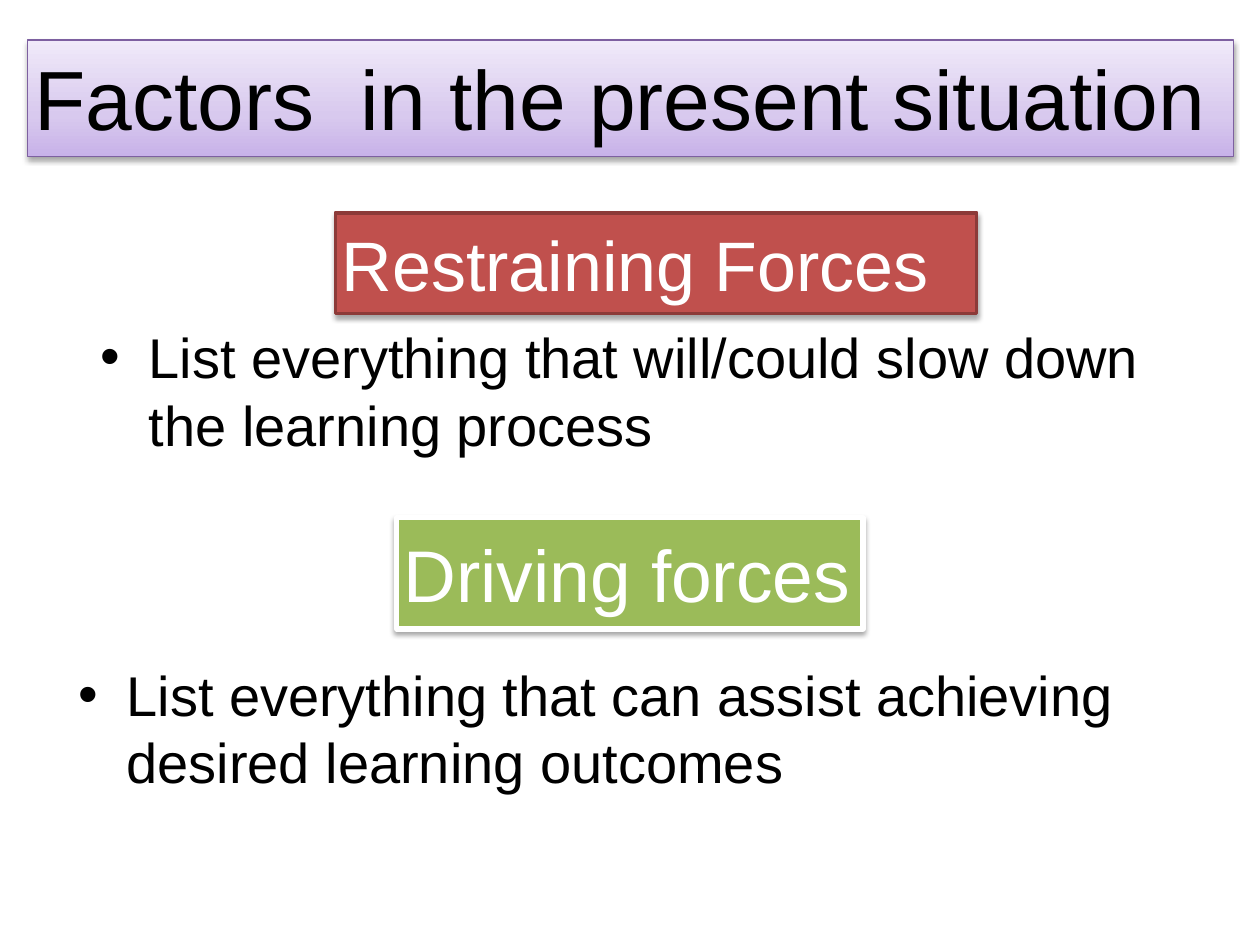
from copy import deepcopy

from lxml import etree
from pptx import Presentation
from pptx import util as u
from pptx.dml.color import RGBColor
from pptx.enum import shapes, text
from pptx.oxml import ns

BLACK = RGBColor(0x00, 0x00, 0x00)
WHITE = RGBColor(0xFF, 0xFF, 0xFF)
RED = RGBColor(0xC0, 0x50, 0x4D)
DARK_RED = RGBColor(0x8C, 0x3A, 0x38)
GREEN = RGBColor(0x9B, 0xBB, 0x59)
PURPLE = RGBColor(0x7D, 0x60, 0xA0)
LILACS = {
    0: RGBColor(0xC8, 0xB2, 0xE9),
    0.35: RGBColor(0xD8, 0xC9, 0xEE),
    1: RGBColor(0xF0, 0xEA, 0xF9),
}


class SlideBuilder:
    """Holds the text style and the slide being built."""

    font_name = "Arial"
    inset = u.Cm(0.13)
    indent = u.Cm(0.97)

    def __init__(self, slide):
        self.slide = slide

    def set_text(self, box, words, size, color, anchor, bullet=False):
        frame = box.text_frame
        settings = {
            "word_wrap": True,
            "auto_size": text.MSO_AUTO_SIZE.NONE,
            "vertical_anchor": anchor,
        }
        for side in ("left", "top", "right", "bottom"):
            settings[f"margin_{side}"] = self.inset
        for name, value in settings.items():
            setattr(frame, name, value)
        para = frame.paragraphs[0]
        para.alignment = text.PP_ALIGN.LEFT
        para.space_before = u.Pt(0)
        if bullet:
            props = para._p.get_or_add_pPr()
            props.set("marL", str(self.indent))
            props.set("indent", str(-self.indent))
            etree.SubElement(props, ns.qn("a:buFont"), typeface=self.font_name)
            etree.SubElement(props, ns.qn("a:buChar"), char="•")
        span = para.add_run()
        span.text = words
        style = {"name": self.font_name, "size": u.Pt(size), "bold": False}
        for name, value in style.items():
            setattr(span.font, name, value)
        span.font.color.rgb = color

    def add_shadow(self, box):
        box.shadow.inherit = False
        effects = box._element.spPr.find(ns.qn("a:effectLst"))
        shadow = etree.SubElement(
            effects, ns.qn("a:outerShdw"), blurRad=str(u.Pt(3)),
            dist=str(u.Pt(1.8)), dir="5400000", rotWithShape="0")
        color = etree.SubElement(shadow, ns.qn("a:srgbClr"), val=str(BLACK))
        etree.SubElement(color, ns.qn("a:alpha"), val="35000")

    def fill_gradient(self, box, stops):
        box.fill.gradient()
        box.fill.gradient_angle = 90
        stop_list = box._element.spPr.find(".//" + ns.qn("a:gsLst"))
        stop_list.insert(1, deepcopy(stop_list[0]))
        for stop, (position, color) in zip(box.fill.gradient_stops, stops.items()):
            stop.position = position
            stop.color.rgb = color

    def add_panel(self, place, words, size, fill, line, line_width,
                  color=WHITE, anchor=text.MSO_ANCHOR.MIDDLE, box=None):
        left, top, width, height = map(u.Cm, place)
        if box is None:
            box = self.slide.shapes.add_shape(
                shapes.MSO_SHAPE.RECTANGLE, left, top, width, height)
        else:
            box.left, box.top, box.width, box.height = left, top, width, height
        if isinstance(fill, dict):
            self.fill_gradient(box, fill)
        else:
            box.fill.solid()
            box.fill.fore_color.rgb = fill
        box.line.color.rgb = line
        box.line.width = u.Pt(line_width)
        self.add_shadow(box)
        self.set_text(box, words, size, color, anchor)

    def add_bullet(self, left, top, words):
        box = self.slide.shapes.add_textbox(
            u.Cm(left), u.Cm(top), u.Cm(21.59), u.Cm(3.56))
        self.set_text(box, words, 32, BLACK, text.MSO_ANCHOR.TOP, bullet=True)


def main():
    deck = Presentation()
    deck.slide_width, deck.slide_height = u.Cm(25.4), u.Cm(19.05)
    page = deck.slides.add_slide(deck.slide_layouts[5])
    builder = SlideBuilder(page)

    # Restraining forces
    builder.add_panel((6.76, 4.29, 12.93, 2.03), "Restraining Forces", 40,
                      RED, DARK_RED, 2, box=page.shapes.title)
    builder.add_bullet(
        1.9, 6.38, "List everything that will/could slow down the learning process")

    # Driving forces
    builder.add_panel((8, 10.44, 9.4, 2.24), "Driving forces", 41.8,
                      GREEN, WHITE, 3)
    builder.add_bullet(
        1.45, 13.18,
        "List everything that can assist achieving desired learning outcomes")

    # Heading banner
    builder.add_panel((0.56, 0.81, 24.31, 2.34),
                      "Factors  in the present situation", 48, LILACS, PURPLE,
                      0.75, color=BLACK, anchor=text.MSO_ANCHOR.TOP)

    deck.save("out.pptx")


if __name__ == "__main__":
    main()
